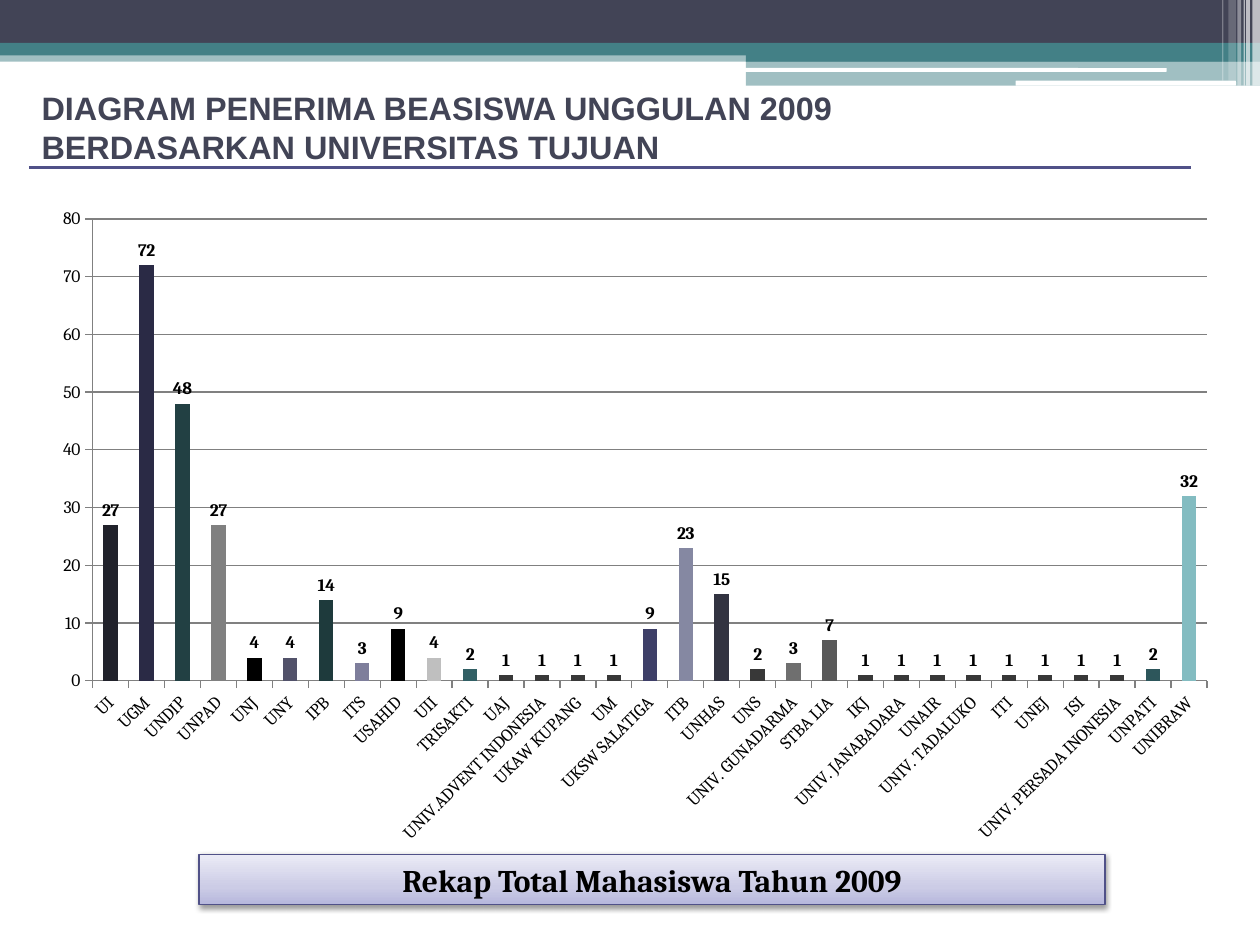
import copy
from dataclasses import dataclass

import pptx
import pptx.chart.data
import pptx.dml.color
import pptx.enum.chart
import pptx.enum.shapes
import pptx.enum.text
import pptx.oxml
import pptx.oxml.ns
import pptx.util
from lxml import etree

Inches = pptx.util.Inches
Pt = pptx.util.Pt
RGBColor = pptx.dml.color.RGBColor
qn = pptx.oxml.ns.qn
MSO_SHAPE = pptx.enum.shapes.MSO_SHAPE

SLATE = RGBColor(0x42, 0x44, 0x56)
TEAL = RGBColor(0x43, 0x80, 0x86)
INDIGO = RGBColor(0x50, 0x51, 0x88)
WHITE = RGBColor(0xFF, 0xFF, 0xFF)
BLACK = RGBColor(0, 0, 0)
GRID = RGBColor(0x80, 0x80, 0x80)
BAR = RGBColor(0x38, 0x38, 0x38)
BANNER_STOPS = [
    (0, RGBColor(0xB6, 0xB7, 0xDC)),
    (0.35, RGBColor(0xCC, 0xCC, 0xE6)),
    (1, RGBColor(0xEB, 0xEB, 0xF6)),
]


@dataclass
class Band:
    left: float
    top: float
    width: float
    height: float
    color: RGBColor
    opacity: int = 100
    rounded: bool = False


@dataclass
class University:
    name: str
    students: int
    color: RGBColor = BAR


BANDS = [
    Band(0, 0.4, 10, 0.09, TEAL, 50),
    Band(0, 0, 10, 0.34, SLATE),
    Band(0, 0.34, 10, 0.1, TEAL),
    Band(5.92, 0.39, 4.08, 0.1, TEAL),
    Band(5.92, 0.48, 4.08, 0.2, TEAL, 50),
    Band(5.91, 0.54, 3.35, 0.03, WHITE, rounded=True),
    Band(8.06, 0.64, 1.75, 0.04, WHITE, rounded=True),
    Band(9.94, 0, 0.06, 0.68, WHITE, 65),
    Band(9.89, 0, 0.03, 0.68, WHITE, 65),
    Band(9.87, 0, 0.01, 0.68, WHITE, 60),
    Band(9.82, 0, 0.03, 0.68, WHITE, 40),
    Band(9.75, 0, 0.06, 0.64, WHITE, 20),
    Band(9.7, 0, 0.01, 0.64, WHITE, 30),
]

UNIVERSITIES = [
    University("UI", 27, RGBColor(0x21, 0x22, 0x2B)),
    University("UGM", 72, RGBColor(0x2A, 0x2A, 0x45)),
    University("UNDIP", 48, RGBColor(0x22, 0x40, 0x43)),
    University("UNPAD", 27, GRID),
    University("UNJ", 4, BLACK),
    University("UNY", 4, RGBColor(0x52, 0x52, 0x6A)),
    University("IPB", 14, RGBColor(0x1E, 0x3A, 0x3C)),
    University("ITS", 3, RGBColor(0x7E, 0x7E, 0x9B)),
    University("USAHID", 9, BLACK),
    University("UII", 4, RGBColor(0xBF, 0xBF, 0xBF)),
    University("TRISAKTI", 2, RGBColor(0x32, 0x60, 0x65)),
    University("UAJ", 1),
    University("UNIV.ADVENT INDONESIA", 1),
    University("UKAW KUPANG", 1),
    University("UM", 1),
    University("UKSW SALATIGA", 9, RGBColor(0x3E, 0x3F, 0x68)),
    University("ITB", 23, RGBColor(0x85, 0x88, 0xA2)),
    University("UNHAS", 15, RGBColor(0x32, 0x33, 0x41)),
    University("UNS", 2),
    University("UNIV. GUNADARMA", 3, RGBColor(0x6F, 0x6F, 0x6F)),
    University("STBA LIA", 7, RGBColor(0x59, 0x59, 0x59)),
    University("IKJ", 1),
    University("UNIV. JANABADARA", 1),
    University("UNAIR", 1),
    University("UNIV. TADALUKO", 1),
    University("ITI", 1),
    University("UNEJ", 1),
    University("ISI", 1),
    University("UNIV. PERSADA INONESIA", 1),
    University("UNPATI", 2, RGBColor(0x2D, 0x56, 0x5B)),
    University("UNIBRAW", 32, RGBColor(0x83, 0xBC, 0xC1)),
]


def set_font(font, name: str, size: float, color: RGBColor, bold: bool) -> None:
    font.name, font.size, font.bold = name, Pt(size), bold
    font.color.rgb = color


def add_band(s, band: Band) -> None:
    kind = MSO_SHAPE.ROUNDED_RECTANGLE if band.rounded else MSO_SHAPE.RECTANGLE
    sp = s.shapes.add_shape(kind, Inches(band.left), Inches(band.top),
                            Inches(band.width), Inches(band.height))
    sp.shadow.inherit = False
    sp.line.fill.background()
    sp.fill.solid()
    sp.fill.fore_color.rgb = band.color
    if band.opacity < 100:
        color = sp.fill._xPr.find(".//" + qn("a:srgbClr"))
        etree.SubElement(color, qn("a:alpha"), val=str(band.opacity * 1000))


def add_title(s, lines: list[str]) -> None:
    sp = s.shapes.title
    sp.left, sp.top, sp.width, sp.height = map(Inches, (0.23, 0.7, 8.12, 0.62))
    tf = sp.text_frame
    tf.word_wrap = True
    tf.auto_size = pptx.enum.text.MSO_AUTO_SIZE.NONE
    tf.vertical_anchor = pptx.enum.text.MSO_ANCHOR.MIDDLE
    for i, line in enumerate(lines):
        p = tf.add_paragraph() if i else tf.paragraphs[0]
        p.alignment = pptx.enum.text.PP_ALIGN.LEFT
        r = p.add_run()
        r.text = line
        set_font(r.font, "Arial", 18.5, SLATE, True)


def add_rule(s) -> None:
    line = s.shapes.add_connector(pptx.enum.shapes.MSO_CONNECTOR.STRAIGHT,
                                  Inches(0.23), Inches(1.33), Inches(9.45), Inches(1.33))
    line.line.color.rgb = INDIGO
    line.line.width = Pt(1.25)
    etree.SubElement(line._element.spPr, qn("a:effectLst"))


def add_student_chart(s) -> None:
    data = pptx.chart.data.CategoryChartData()
    data.categories = [u.name for u in UNIVERSITIES]
    data.add_series("Series 1", [u.students for u in UNIVERSITIES])
    chart = s.shapes.add_chart(pptx.enum.chart.XL_CHART_TYPE.COLUMN_CLUSTERED, Inches(0.31),
                               Inches(1.56), Inches(9.45), Inches(5.23), data).chart
    chart.has_title = chart.has_legend = False
    set_font(chart.font, "Cambria", 10, BLACK, False)
    for axis in (chart.category_axis, chart.value_axis):
        axis.major_tick_mark = pptx.enum.chart.XL_TICK_MARK.CROSS
        axis.format.line.color.rgb = GRID
    chart.category_axis.major_tick_mark = pptx.enum.chart.XL_TICK_MARK.OUTSIDE
    set_font(chart.category_axis.tick_labels.font, "Cambria", 10, BLACK, False)
    chart.category_axis._element.find(".//" + qn("a:bodyPr")).set("rot", "-2700000")
    axis = chart.value_axis
    axis.minimum_scale, axis.maximum_scale, axis.major_unit = 0, 80, 10
    axis.major_gridlines.format.line.color.rgb = GRID
    plot = chart.plots[0]
    plot.gap_width, plot.vary_by_categories = 150, False
    plot.has_data_labels = True
    labels = plot.data_labels
    labels.show_value = True
    labels.position = pptx.enum.chart.XL_LABEL_POSITION.OUTSIDE_END
    set_font(labels.font, "Cambria", 10, BLACK, True)
    series = plot.series[0]
    series.format.fill.solid()
    series.format.fill.fore_color.rgb = BAR
    for i, university in enumerate(UNIVERSITIES):
        if university.color != BAR:
            fill = series.points[i].format.fill
            fill.solid()
            fill.fore_color.rgb = university.color
    area = chart._chartSpace.find(".//" + qn("c:plotArea"))
    for old in area.findall(qn("c:layout")):
        area.remove(old)
    layout = etree.Element(qn("c:layout"))
    manual = etree.SubElement(layout, qn("c:manualLayout"))
    for tag, val in [("layoutTarget", "inner"), ("xMode", "edge"), ("yMode", "edge"),
                     ("x", "0.045"), ("y", "0.034"), ("w", "0.936"), ("h", "0.701")]:
        etree.SubElement(manual, qn("c:" + tag), val=val)
    area.insert(0, layout)


def add_banner(s, text: str) -> None:
    sp = s.shapes.add_shape(MSO_SHAPE.RECTANGLE, Inches(1.58), Inches(6.78),
                            Inches(7.19), Inches(0.4))
    sp.fill.gradient()
    sp.fill.gradient_angle = 90
    first = sp.fill._xPr.find(".//" + qn("a:gs"))
    first.addnext(copy.deepcopy(first))
    for stop, (position, color) in zip(sp.fill.gradient_stops, BANNER_STOPS):
        stop.position, stop.color.rgb = position, color
    sp.line.color.rgb = INDIGO
    sp.line.width = Pt(0.75)
    sp.shadow.inherit = False
    effects = sp._element.spPr.find(qn("a:effectLst"))
    shadow = etree.SubElement(effects, qn("a:outerShdw"), blurRad=str(Pt(3.1)),
                              dist=str(Pt(1.6)), dir="5400000", rotWithShape="0")
    color = etree.SubElement(shadow, qn("a:srgbClr"), val=str(BLACK))
    etree.SubElement(color, qn("a:alpha"), val="38000")
    tf = sp.text_frame
    tf.word_wrap = True
    p = tf.paragraphs[0]
    p.alignment = pptx.enum.text.PP_ALIGN.CENTER
    r = p.add_run()
    r.text = text
    set_font(r.font, "Cambria", 18, BLACK, True)


def main() -> None:
    prs = pptx.Presentation()
    prs.slide_width, prs.slide_height = Inches(10), Inches(7.5)
    s = prs.slides.add_slide(prs.slide_layouts[5])
    for band in BANDS:
        add_band(s, band)
    add_title(s, ["DIAGRAM PENERIMA BEASISWA UNGGULAN 2009", "BERDASARKAN UNIVERSITAS TUJUAN"])
    add_rule(s)
    add_student_chart(s)
    add_banner(s, "Rekap Total Mahasiswa Tahun 2009")
    prs.save("out.pptx")


if __name__ == "__main__":
    main()
